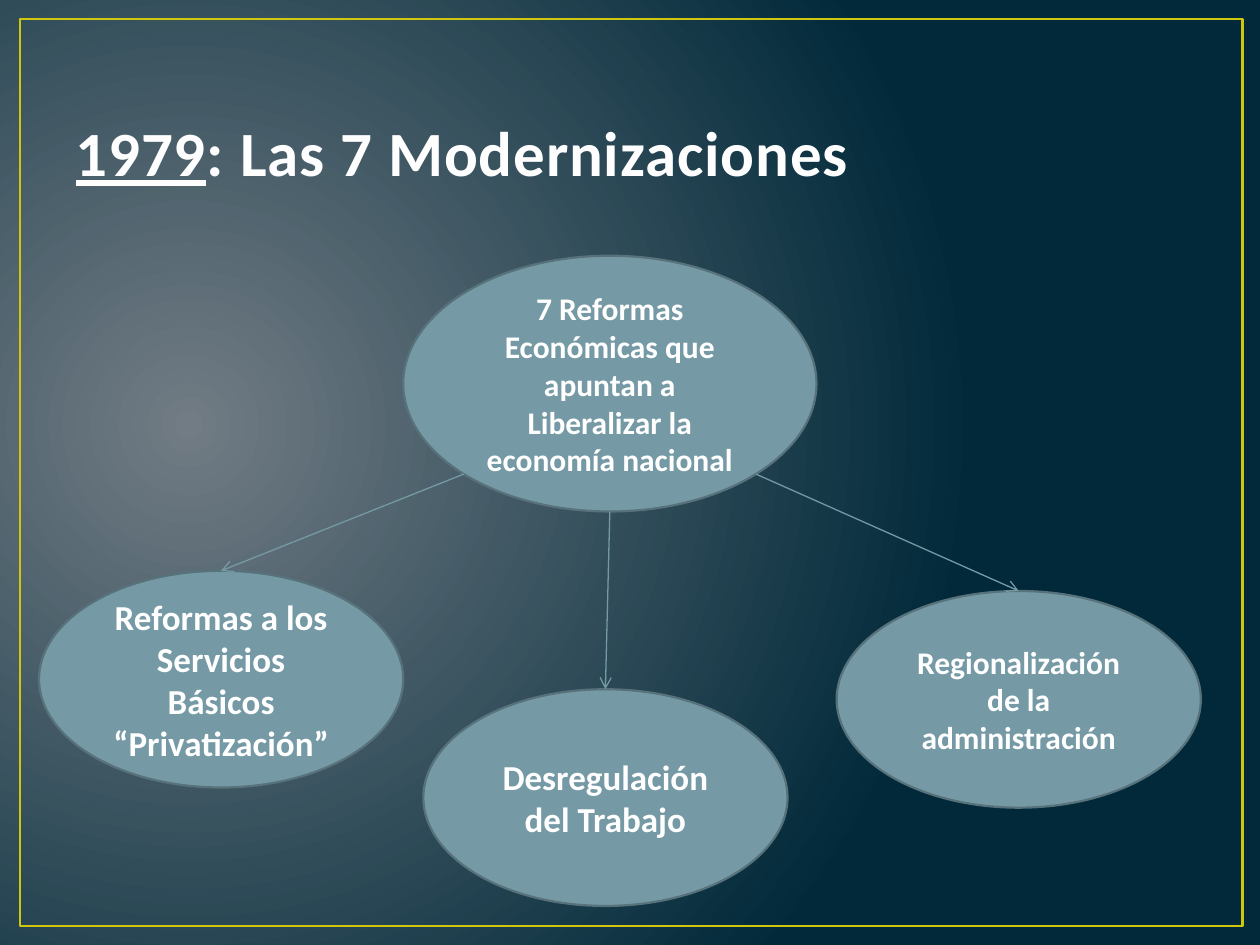
from dataclasses import dataclass
from math import sqrt

from lxml import etree
from pptx import Presentation
from pptx.dml.color import RGBColor
from pptx.enum.shapes import MSO_CONNECTOR, MSO_SHAPE
from pptx.enum.text import MSO_ANCHOR, PP_ALIGN
from pptx.oxml.ns import qn
from pptx.util import Inches, Pt

ELLIPSE, RECTANGLE = MSO_SHAPE.OVAL, MSO_SHAPE.RECTANGLE
STRAIGHT = MSO_CONNECTOR.STRAIGHT
LEFT, CENTER = PP_ALIGN.LEFT, PP_ALIGN.CENTER
MIDDLE, BOTTOM = MSO_ANCHOR.MIDDLE, MSO_ANCHOR.BOTTOM
TITLE_ONLY = 5


@dataclass(frozen=True)
class Theme:
    font: str = "Calibri"
    glow: str = "717C84"
    night: str = "01293A"
    frame: str = "CFC60D"
    title: str = "FEFEFE"
    text: str = "FFFFFF"
    bubble: str = "759AA5"
    bubble_line: str = "57727A"
    title_size: int = 36
    large: int = 20
    medium: int = 18


THEME = Theme()

ROOT = ((3.2, 2.03, 3.28, 2.03),
        ["7 Reformas Económicas que apuntan a Liberalizar la economía nacional"], THEME.medium)
BRANCH_SIZE = (2.89, 1.72)
# Position, paragraphs, type size, side of the root where the arrow starts
BRANCHES = [
    ((0.31, 4.53), ["Reformas a los Servicios Básicos", "“Privatización”"], THEME.large, -1),
    ((6.64, 4.69), ["Regionalización de la administración"], THEME.medium, 1),
    ((3.36, 5.47), ["Desregulación del Trabajo"], THEME.large, 0),
]


def color(value):
    return RGBColor.from_string(value)


def add_text(paragraph, text, *, size, fill=THEME.text, underline=False, spacing=0, align=CENTER):
    paragraph.alignment = align
    run = paragraph.add_run()
    run.text = text
    font = run.font
    font.name, font.size, font.bold = THEME.font, Pt(size), True
    font.underline = underline
    font.color.rgb = color(fill)
    if spacing:
        font._element.set("spc", str(round(spacing * 100)))


def paint_background(slide):
    fill = slide.background.fill
    fill.gradient()
    for stop, value, position in zip(fill.gradient_stops, (THEME.glow, THEME.night), (0, 1)):
        stop.color.rgb = color(value)
        stop.position = position
    gradient = next(slide.element.iter(qn("a:gradFill")))
    gradient.remove(gradient.find(qn("a:lin")))
    circle = etree.SubElement(gradient, qn("a:path"), path="circle")
    etree.SubElement(circle, qn("a:fillToRect"), l="15000", t="50000", r="85000", b="60000")


def add_frame(slide, box):
    frame = slide.shapes.add_shape(RECTANGLE, *map(Inches, box))
    frame.shadow.inherit = False
    frame.fill.background()
    frame.line.color.rgb = color(THEME.frame)
    frame.line.width = Pt(1.5)


def add_title(slide, box):
    title = slide.shapes.title
    title.left, title.top, title.width, title.height = map(Inches, box)
    title.text_frame.vertical_anchor = BOTTOM
    paragraph = title.text_frame.paragraphs[0]
    for text, underline in (("1979", True), (": Las 7 Modernizaciones", False)):
        add_text(paragraph, text, size=THEME.title_size, fill=THEME.title,
                 underline=underline, spacing=0.5, align=LEFT)


def add_bubble(slide, box, lines, size):
    bubble = slide.shapes.add_shape(ELLIPSE, *map(Inches, box))
    bubble.shadow.inherit = False
    bubble.fill.solid()
    bubble.fill.fore_color.rgb = color(THEME.bubble)
    bubble.line.color.rgb = color(THEME.bubble_line)
    bubble.line.width = Pt(1.25)
    frame = bubble.text_frame
    frame.word_wrap = True
    frame.vertical_anchor = MIDDLE
    for index, text in enumerate(lines):
        paragraph = frame.add_paragraph() if index else frame.paragraphs[0]
        add_text(paragraph, text, size=size)


def lower_point(box, side):
    """Point on the lower edge of an ellipse: 45° left (-1), bottom (0) or 45° right (1)."""
    left, top, width, height = box
    across, down = (side / sqrt(2), 1 / sqrt(2)) if side else (0, 1)
    return left + width / 2 * (1 + across), top + height / 2 * (1 + down)


def add_arrow(slide, start, end):
    arrow = slide.shapes.add_connector(STRAIGHT, *map(Inches, (*start, *end)))
    arrow.line.color.rgb = color(THEME.bubble)
    arrow.line.width = Pt(0.75)
    properties = arrow.element.spPr
    etree.SubElement(properties.find(qn("a:ln")), qn("a:tailEnd"), type="arrow")
    etree.SubElement(properties, qn("a:effectLst"))


def add_diagram(slide, root, branches):
    root_box = root[0]
    add_bubble(slide, *root)
    for position, lines, size, _ in branches:
        add_bubble(slide, (*position, *BRANCH_SIZE), lines, size)
    for (left, top), _, _, side in branches:
        add_arrow(slide, lower_point(root_box, side), (left + BRANCH_SIZE[0] / 2, top))


def main():
    presentation = Presentation()
    presentation.slide_width, presentation.slide_height = Inches(10), Inches(7.5)
    slide = presentation.slides.add_slide(presentation.slide_layouts[TITLE_ONLY])
    paint_background(slide)
    add_frame(slide, (0.16, 0.15, 9.7, 7.2))
    add_title(slide, (0.5, 0.3, 9, 1.25))
    add_diagram(slide, ROOT, BRANCHES)
    presentation.save("out.pptx")


if __name__ == "__main__":
    main()
